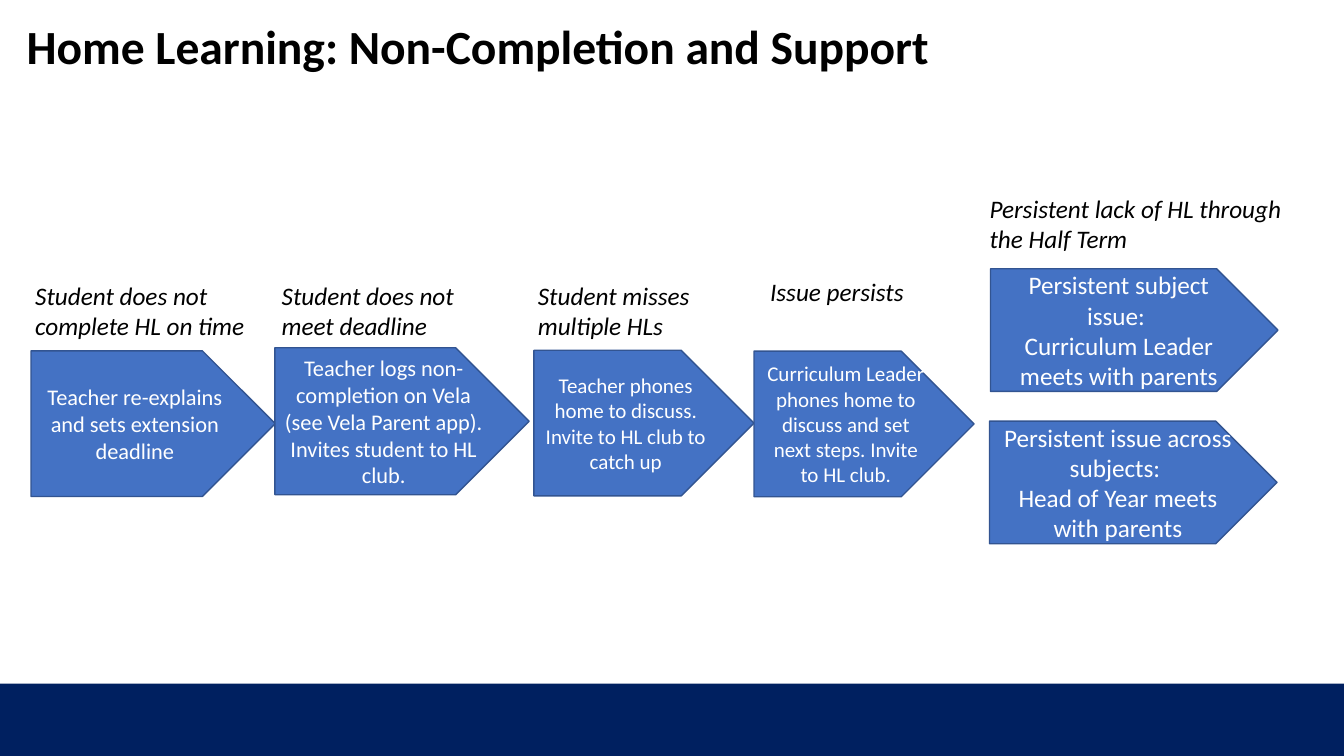
from dataclasses import dataclass
from pptx import Presentation
from pptx.dml.color import RGBColor
from pptx.enum.shapes import MSO_SHAPE
from pptx.enum.text import MSO_ANCHOR, MSO_AUTO_SIZE, PP_ALIGN
from pptx.util import Pt


@dataclass(frozen=True)
class Theme:
    font: str = "Calibri"
    ink: RGBColor = RGBColor(0x00, 0x00, 0x00)
    paper: RGBColor = RGBColor(0xFF, 0xFF, 0xFF)
    navy: RGBColor = RGBColor(0x00, 0x20, 0x60)
    blue: RGBColor = RGBColor(0x44, 0x72, 0xC4)
    edge: RGBColor = RGBColor(0x32, 0x54, 0x91)
    title: int = 34
    large: int = 18
    medium: int = 16
    small: int = 15


theme = Theme()


def write(box, text, size, color, align, anchor, bold=False, italic=False):
    frame = box.text_frame
    frame.word_wrap = True
    frame.auto_size = MSO_AUTO_SIZE.NONE
    frame.vertical_anchor = anchor
    para = frame.paragraphs[0]
    para.text = text
    para.alignment = align
    for span in para.runs:
        span.font.name = theme.font
        span.font.size = Pt(size)
        span.font.bold = bold
        span.font.italic = italic
        span.font.color.rgb = color


def add_block(preset, place, fill):
    block = page.shapes.add_shape(preset, *map(Pt, place))
    block.shadow.inherit = False
    block.fill.solid()
    block.fill.fore_color.rgb = fill
    return block


deck = Presentation()
deck.slide_width, deck.slide_height = Pt(960), Pt(540)
page = deck.slides.add_slide(deck.slide_layouts[5])

band = add_block(MSO_SHAPE.RECTANGLE, (0, 488.4, 960, 51.6), theme.navy)
band.line.fill.background()

title = page.shapes.title
title.left, title.top, title.width, title.height = Pt(11.8), Pt(-17.5), Pt(828), Pt(104.4)
write(title, "Home Learning: Non-Completion and Support", theme.title, theme.ink,
      PP_ALIGN.LEFT, MSO_ANCHOR.MIDDLE, bold=True)
title.text_frame.paragraphs[0].line_spacing = 0.9

steps = [
    ((22.2, 250.6, 174.4, 104), theme.medium,
     "Teacher re-explains and sets extension deadline"),
    ((196.4, 248.4, 181.6, 105), theme.medium,
     "Teacher logs non-completion on Vela (see Vela Parent app). Invites student to HL club."),
    ((381.4, 250.2, 157.2, 104), theme.small,
     "Teacher phones home to discuss. Invite to HL\u00a0club to catch up"),
    ((538.6, 250.8, 157.2, 104), theme.small,
     "Curriculum Leader phones home to discuss and set next steps. Invite to HL club."),
    ((707.5, 192, 205.4, 87.6), theme.large,
     "Persistent subject issue: \nCurriculum Leader meets with parents"),
    ((706.8, 300.8, 205.4, 87.6), theme.large,
     "Persistent issue across subjects: \nHead of Year meets with parents"),
]
for place, size, text in steps:
    arrow = add_block(MSO_SHAPE.PENTAGON, place, theme.blue)
    arrow.line.color.rgb = theme.edge
    arrow.line.width = Pt(1)
    write(arrow, text, size, theme.paper, PP_ALIGN.CENTER, MSO_ANCHOR.MIDDLE)

triggers = [
    ((18, 196.8, 166.3, 50.9), "Student does not complete HL on time"),
    ((194.1, 196.8, 166.3, 50.9), "Student does not meet deadline"),
    ((377.1, 196.8, 166.3, 50.9), "Student misses multiple HLs"),
    ((543, 194.1, 166.3, 29.1), "Issue persists"),
    ((699.8, 134.6, 244, 50.9), "Persistent lack of HL through the Half Term"),
]
for place, text in triggers:
    box = page.shapes.add_textbox(*map(Pt, place))
    write(box, text, theme.large, theme.ink, PP_ALIGN.LEFT, MSO_ANCHOR.TOP, italic=True)
    box.text_frame.auto_size = MSO_AUTO_SIZE.SHAPE_TO_FIT_TEXT

deck.save("out.pptx")
